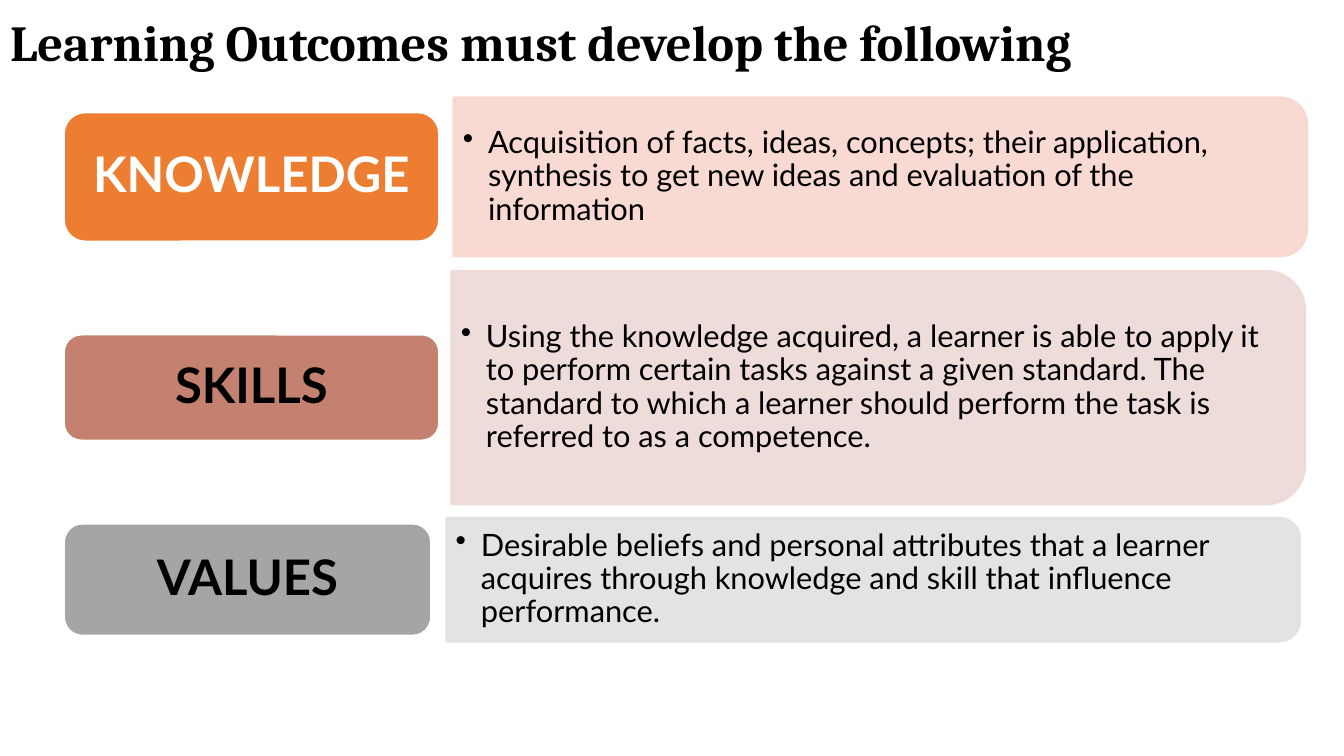
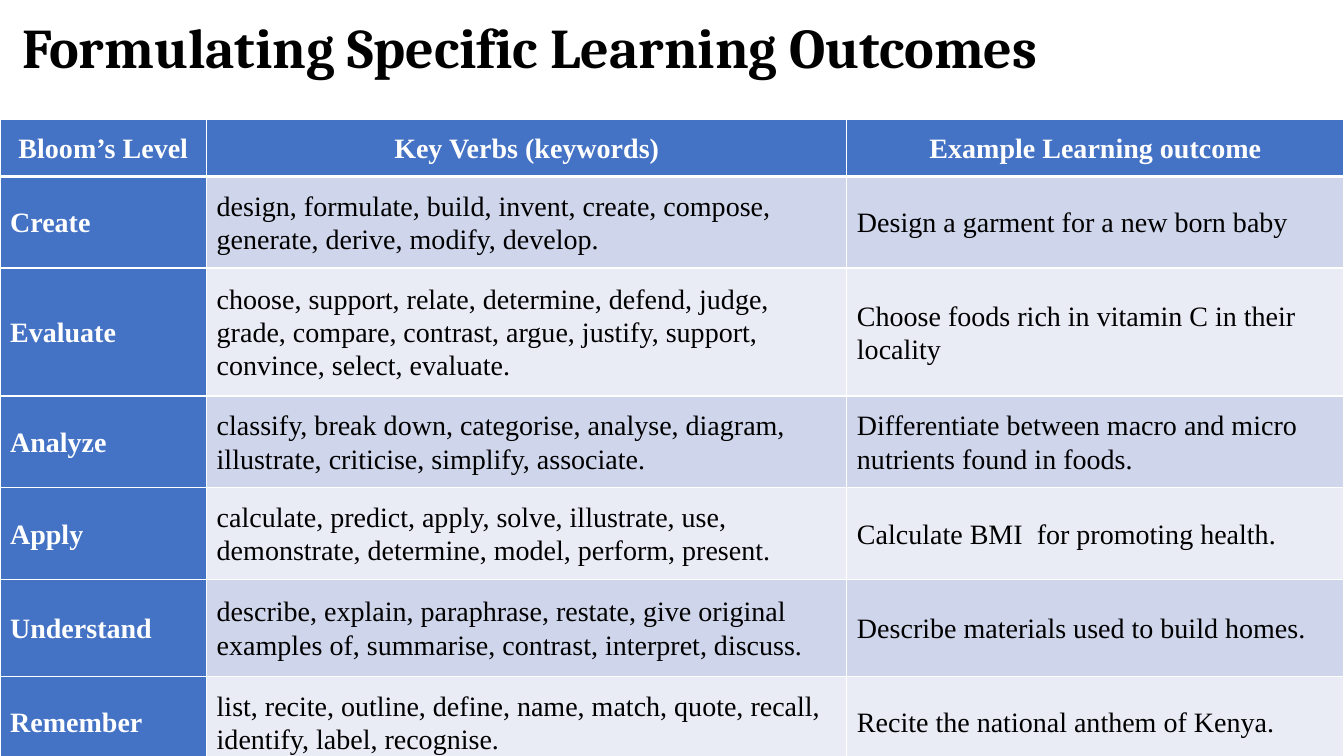
import pptx
import pptx.util
import pptx.dml.color
import pptx.enum.shapes
import pptx.enum.text
import pptx.oxml
import pptx.oxml.ns

INCH = pptx.util.Inches
SHAPE = pptx.enum.shapes.MSO_SHAPE
ALIGN = pptx.enum.text.PP_ALIGN
ANCHOR = pptx.enum.text.MSO_ANCHOR
NS = pptx.oxml.ns.nsdecls("a")
WIDE, HIGH = 13.33, 7.5

HUES = {
    "ink": "000000", "white": "FFFFFF", "head": "4472C4",
    "odd": "CFD5EA", "even": "E9EBF5",
    "orange": "ED7D31", "peach": "F8D7CE",
    "clay": "C48170", "rose": "EDD9D7",
    "grey": "A5A5A5", "pale": "E1E1E1",
}
FACES = {"title": "Cambria", "body": "Lato", "table": "Times New Roman"}

# Content: label, hues of label, text and panel, panel left, top and height,
# label width and height, then the description
DOMAINS = [
    ("KNOWLEDGE", "orange", "white", "peach", (4.5, 0.97, 1.57), (3.73, 1.29),
     "Acquisition of facts, ideas, concepts; their application, synthesis "
     "to get new ideas and evaluation of the information"),
    ("SKILLS", "clay", "ink", "rose", (4.48, 2.69, 2.31), (3.73, 1.06),
     "Using the knowledge acquired, a learner is able to apply it to perform "
     "certain tasks against a given standard. The standard to which a learner "
     "should perform the task is referred to as a competence."),
    ("VALUES", "grey", "ink", "pale", (4.43, 5.14, 1.22), (3.65, 1.12),
     "Desirable beliefs and personal attributes that a learner acquires "
     "through knowledge and skill that influence performance."),
]
LABEL_X, PANEL_W = 0.63, 8.46

LEVELS = [
    ("Bloom’s Level", "Key Verbs (keywords)", "Example Learning outcome"),
    ("Create",
     "design, formulate, build, invent, create, compose, generate, derive, "
     "modify, develop.",
     "Design a garment for a new born baby"),
    ("Evaluate",
     "choose, support, relate, determine, defend, judge, grade, compare, "
     "contrast, argue, justify, support, convince, select, evaluate.",
     "Choose foods rich in vitamin C in their locality"),
    ("Analyze",
     "classify, break down, categorise, analyse, diagram, illustrate, "
     "criticise, simplify, associate.",
     "Differentiate between macro and micro nutrients found in foods."),
    ("Apply",
     "calculate, predict, apply, solve, illustrate, use, demonstrate, "
     "determine, model, perform, present.",
     "Calculate BMI  for promoting health."),
    ("Understand",
     "describe, explain, paraphrase, restate, give original examples of, "
     "summarise, contrast, interpret, discuss.",
     "Describe materials used to build homes."),
    ("Remember",
     "list, recite, outline, define, name, match, quote, recall, identify, "
     "label, recognise.",
     "Recite the national anthem of Kenya."),
]
COLS = [2.05, 6.35, 4.93]
ROWS = [0.57, 0.91, 1.27, 0.91, 0.91, 0.96, 0.91]
TABLE_Y = 1.18


def tint(name):
    return pptx.dml.color.RGBColor.from_string(HUES[name])


def write(frame, text, face="body", size=22, hue="ink", bold=False,
          align=ALIGN.LEFT, line=0.9, bullet=False):
    """Put one formatted paragraph into a text frame."""
    frame.word_wrap = True
    para = frame.paragraphs[0]
    para.alignment, para.line_spacing = align, line
    if bullet:
        props = para._p.get_or_add_pPr()
        props.set("marL", str(INCH(0.25)))
        props.set("indent", str(INCH(-0.25)))
        for xml in (f'<a:buClr {NS}><a:srgbClr val="{HUES[hue]}"/></a:buClr>',
                    f'<a:buChar {NS} char="•"/>'):
            props.append(pptx.oxml.parse_xml(xml))
    run = para.add_run()
    run.text = text
    font = run.font
    font.name, font.size, font.bold = FACES[face], pptx.util.Pt(size), bold
    font.color.rgb = tint(hue)


def pad(part, side, top):
    """Set the inner margins of a frame or cell."""
    part.margin_left = part.margin_right = INCH(side)
    part.margin_top = part.margin_bottom = INCH(top)


def start(deck, text, box, size):
    """Add a slide with its title in place."""
    slide = deck.slides.add_slide(deck.slide_layouts[5])
    title = slide.shapes.title
    title.left, title.top, title.width, title.height = map(INCH, box)
    frame = title.text_frame
    frame.auto_size = pptx.enum.text.MSO_AUTO_SIZE.NONE
    frame.vertical_anchor = ANCHOR.TOP
    pad(frame, 0.1, 0.05)
    write(frame, text, face="title", size=size, bold=True)
    return slide


def block(slide, kind, box, fill, edge, alpha=None):
    """Add a filled shape, slightly see-through when alpha is given."""
    shape = slide.shapes.add_shape(kind, *map(INCH, box))
    shape.shadow.inherit = False
    shape.fill.solid()
    shape.fill.fore_color.rgb = tint(fill)
    shape.line.color.rgb = tint(edge)
    shape.line.width = pptx.util.Pt(2)
    if alpha:
        for color in shape._element.spPr.iter(pptx.oxml.ns.qn("a:srgbClr")):
            color.append(pptx.oxml.parse_xml(
                f'<a:alpha {NS} val="{alpha * 1000}"/>'))
    return shape


def domain(slide, name, fill, hue, pale, panel, label, text):
    """Draw one label with its description panel."""
    left, top, high = panel
    mid = top + high / 2
    # The panel is a tall shape turned on its side
    side = block(slide, SHAPE.ROUND_2_SAME_RECTANGLE,
                 (left + (PANEL_W - high) / 2, mid - PANEL_W / 2,
                  high, PANEL_W), pale, pale, alpha=90)
    side.rotation = 90
    note = slide.shapes.add_textbox(
        *map(INCH, (left, top, PANEL_W - 0.08, high))).text_frame
    note.vertical_anchor = ANCHOR.MIDDLE
    pad(note, 0.09, 0.05)
    write(note, text, hue="ink", bullet=True)
    # Label, centred on the panel
    wide, tall = label
    tag = block(slide, SHAPE.ROUNDED_RECTANGLE,
                (LABEL_X, mid - tall / 2, wide, tall), fill, "white").text_frame
    tag.vertical_anchor = ANCHOR.MIDDLE
    pad(tag, 0.15, 0.07)
    write(tag, name, size=35, hue=hue, bold=True, align=ALIGN.CENTER)


def rule(cell, row):
    """Draw white borders, thick between header and body."""
    props = cell._tc.get_or_add_tcPr()
    widths = {"L": 1, "R": 1, "T": 3 if row == 1 else 1,
              "B": 3 if row == 0 else 1}
    for spot, (edge, wide) in enumerate(widths.items()):
        props.insert(spot, pptx.oxml.parse_xml(
            f'<a:ln{edge} {NS} w="{pptx.util.Pt(wide)}"><a:solidFill>'
            f'<a:srgbClr val="{HUES["white"]}"/></a:solidFill></a:ln{edge}>'))


def grid(slide):
    """Draw the table of levels."""
    table = slide.shapes.add_table(
        len(ROWS), len(COLS), 0, INCH(TABLE_Y),
        INCH(sum(COLS)), INCH(sum(ROWS))).table
    for col, wide in zip(table.columns, COLS):
        col.width = INCH(wide)
    for r, (high, texts) in enumerate(zip(ROWS, LEVELS)):
        table.rows[r].height = INCH(high)
        for c, text in enumerate(texts):
            cell = table.cell(r, c)
            key = r == 0 or c == 0
            cell.fill.solid()
            cell.fill.fore_color.rgb = tint(
                "head" if key else "odd" if r % 2 else "even")
            cell.vertical_anchor = ANCHOR.MIDDLE
            pad(cell, 0.1, 0.1)
            rule(cell, r)
            write(cell.text_frame, text, face="table", size=20, line=1.07,
                  hue="white" if key else "ink", bold=key,
                  align=ALIGN.LEFT if r else ALIGN.CENTER)


def main():
    deck = pptx.Presentation()
    deck.slide_width, deck.slide_height = INCH(WIDE), INCH(HIGH)
    slide = start(deck, "Learning Outcomes must develop the following",
                  (0, 0.13, 12.32, 0.96), 36)
    for item in DOMAINS:
        domain(slide, *item)
    grid(start(deck, "Formulating Specific Learning Outcomes",
               (0.12, 0.15, 10.57, 0.61), 40))
    deck.save("out.pptx")


if __name__ == "__main__":
    main()
